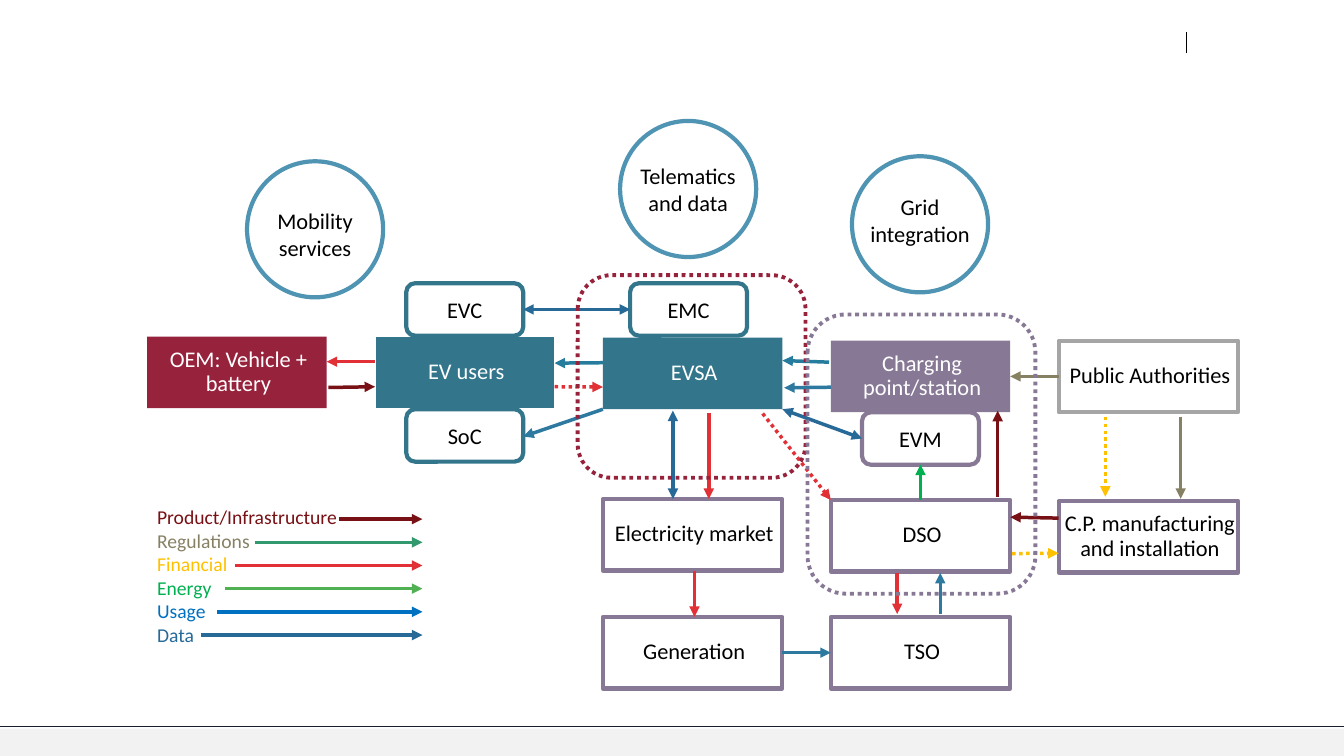
from dataclasses import dataclass

from lxml import etree
from pptx import Presentation
from pptx.dml.color import RGBColor
from pptx.enum import dml, shapes, text
from pptx.oxml import ns
from pptx.util import Inches, Pt


@dataclass(frozen=True)
class Theme:
    font: str = "Calibri"
    body: int = 16
    legend: int = 14
    rule: float = 1
    arrow: float = 2.5
    zone: float = 2.75
    outline: float = 3
    white: str = "FFFFFF"
    black: str = "000000"
    footer: str = "F2F2F2"
    navy: str = "16212B"
    wine: str = "97223C"
    teal: str = "33768C"
    purple: str = "877995"
    grey: str = "A5A5A5"
    ring: str = "4F94B3"
    product: str = "781115"
    regulation: str = "878164"
    finance: str = "E13137"
    yellow: str = "FFC000"
    energy: str = "00B050"
    usage: str = "0070C0"
    data: str = "276A98"
    exchange: str = "2D79A0"
    signal: str = "267C9C"
    sea: str = "31996D"
    leaf: str = "50B152"


T = Theme()
ACTOR_SIZE = (1.78, 0.71)
MODULE_SIZE = (1.16, 0.52)
COLUMN = 2.26

ACTORS = {
    "OEM: Vehicle + battery": (0, 0.61, T.wine, None),
    "EV users": (1, 0.61, T.teal, T.white),
    "EVSA": (2, 0.62, T.teal, None),
    "Charging point/station": (3, 0.65, T.purple, None),
    "Public Authorities": (4, 0.65, None, T.grey),
    "Electricity market": (2, 2.22, None, T.purple),
    "DSO": (3, 2.23, None, T.purple),
    "C.P. manufacturing and installation": (4, 2.24, None, T.purple),
    "Generation": (2, 3.39, None, T.purple),
    "TSO": (3, 3.39, None, T.purple),
}
MODULES = {
    "EVC": (2.57, 0.08, T.teal),
    "SoC": (2.57, 1.33, T.teal),
    "EMC": (4.79, 0.08, T.teal),
    "EVM": (7.09, 1.36, T.purple),
}
ZONES = [(4.27, 0, 2.26, 2.01, T.wine), (6.55, 0.39, 2.26, 2.77, T.purple)]
OEM, CHARGING, AUTHORITIES, MARKET, *_ = [
    name for name in ACTORS if name not in ("EV users", "EVSA")]
MANUFACTURING = "C.P. manufacturing and installation"
DOTTED, BOTH = {"dotted": True}, {"both": True}
FLOWS = [
    ("EV users", 0, 0.35, OEM, 1, 0.35, T.finance, {}),
    (OEM, 1.01, 0.71, "EV users", 0, 0.7, T.product, {}),
    ("EVSA", 0, 0.35, "EV users", 1, 0.37, T.signal, {}),
    ("EV users", 1, 0.7, "EVSA", 0, 0.69, T.finance, DOTTED),
    ("EVSA", 0, 1, "SoC", 1, 0.52, T.exchange, {}),
    ("EVC", 1, 0.5, "EMC", 0, 0.5, T.data, BOTH),
    (CHARGING, -0.01, 0.3, "EVSA", 1, 0.32, T.signal, {}),
    (CHARGING, 0, 0.65, "EVSA", 1.01, 0.7, T.exchange, {}),
    ("EVSA", 1, 1, "EVM", 0, 0.5, T.data, BOTH),
    ("EVSA", 0.89, 1.06, "DSO", 0, 0, T.finance, DOTTED),
    (MARKET, 0.39, 0, "EVSA", 0.39, 1.02, T.data, BOTH),
    ("EVSA", 0.59, 1.05, MARKET, 0.59, 0, T.finance, {}),
    (MARKET, 0.51, 1, "Generation", 0.51, 0, T.finance, {}),
    ("Generation", 1, 0.5, "TSO", 0, 0.5, T.exchange, {}),
    ("DSO", 0.37, 1.02, "TSO", 0.37, -0.04, T.finance, {}),
    ("TSO", 0.61, -0.04, "DSO", 0.61, 1.02, T.exchange, {}),
    ("DSO", 0.5, 0, "EVM", 0.5, 1, T.energy, {}),
    ("DSO", 0.93, -0.04, CHARGING, 0.93, 0.98, T.product, {}),
    (MANUFACTURING, 0, 0.24, "DSO", 1, 0.24, T.product, {}),
    ("DSO", 1.01, 0.75, MANUFACTURING, 0, 0.73, T.yellow, DOTTED),
    (AUTHORITIES, 0, 0.5, CHARGING, 1, 0.5, T.regulation, {}),
    (AUTHORITIES, 0.26, 1.06, MANUFACTURING, 0.26, -0.06, T.yellow, DOTTED),
    (AUTHORITIES, 0.68, 1.06, MANUFACTURING, 0.68, -0.03, T.regulation, {}),
]
SERVICES = [
    ("Mobility services", 2.45, 1.6, 0.05),
    ("Telematics and data", 6.15, 1.2, 0),
    ("Grid integration", 8.45, 1.55, -0.04),
]
LEGEND = [
    ("Product/Infrastructure", T.product, T.product, 1.9),
    ("Regulations", T.regulation, T.sea, 1.07),
    ("Financial", T.yellow, T.finance, 0.87),
    ("Energy", T.energy, T.leaf, 0.77),
    ("Usage", T.usage, T.usage, 0.69),
    ("Data", T.data, T.data, 0.53),
]


def write(paragraph, words, size=T.body, color=T.black, align=None, spacing=None, after=None):
    run = paragraph.add_run()
    run.text = words
    run.font.name, run.font.size = T.font, Pt(size)
    run.font.color.rgb = RGBColor.from_string(color)
    paragraph.alignment, paragraph.line_spacing = align, spacing
    if after is not None:
        paragraph.space_after = Pt(after)


def add_outline(slide, kind, box, fill=None, line=None, width=T.outline, dotted=False):
    outline = slide.shapes.add_shape(kind, *map(Inches, box))
    outline.shadow.inherit = False
    for paint, color in ((outline.fill, fill), (outline.line.fill, line)):
        if color:
            paint.solid()
            paint.fore_color.rgb = RGBColor.from_string(color)
        else:
            paint.background()
    if line:
        outline.line.width = Pt(width)
    if dotted:
        outline.line.dash_style = dml.MSO_LINE.ROUND_DOT
    return outline


def label(frame, words, insets=(0, 0, 0, 0), **style):
    frame.word_wrap = True
    frame.vertical_anchor = text.MSO_ANCHOR.MIDDLE
    frame.margin_left, frame.margin_top, frame.margin_right, frame.margin_bottom = map(Inches, insets)
    write(frame.paragraphs[0], words, align=text.PP_ALIGN.CENTER, **style)


def add_line(slide, start, end, color, width=T.arrow, dotted=False, both=False, arrow=True):
    line = slide.shapes.add_connector(shapes.MSO_CONNECTOR.STRAIGHT, *map(Inches, (*start, *end)))
    line.line.color.rgb = RGBColor.from_string(color)
    line.line.width = Pt(width)
    if dotted:
        line.line.dash_style = dml.MSO_LINE.ROUND_DOT
    properties = line._element.spPr
    stroke = properties.find(ns.qn("a:ln"))
    for tip, shown in (("a:headEnd", both), ("a:tailEnd", arrow)):
        if shown:
            etree.SubElement(stroke, ns.qn(tip), type="triangle")
    etree.SubElement(properties, ns.qn("a:effectLst"))


def page_frame(slide, width, height):
    add_outline(slide, shapes.MSO_SHAPE.RECTANGLE, (0, height - 0.27, width, 0.27), fill=T.footer)
    add_line(slide, (0, height - 0.29), (width, height - 0.29), T.navy, T.rule, arrow=False)
    add_line(slide, (width - 1.56, 0.32), (width - 1.56, 0.53), T.black, T.rule, arrow=False)


def service_circle(slide, words, left, top, drop, diameter=1.35, span=1.44):
    add_outline(slide, shapes.MSO_SHAPE.OVAL, (left, top, diameter, diameter), line=T.ring)
    caption = slide.shapes.add_textbox(*map(Inches, (
        left + (diameter - span) / 2, top + drop, span, diameter)))
    label(caption.text_frame, words, insets=(0.1, 0.05, 0.1, 0.05))


def ecosystem(slide, left, top):
    boxes = {}
    for name, (column, row, fill, line) in ACTORS.items():
        boxes[name] = (left + column * COLUMN, top + row, *ACTOR_SIZE)
        actor = add_outline(slide, shapes.MSO_SHAPE.RECTANGLE, boxes[name], fill, line,
                            T.rule if fill else T.outline)
        label(actor.text_frame, name, insets=(0.05, 0.04, 0.02, 0.04),
              color=T.white if fill else T.black, spacing=0.9, after=7)
    for name, (x, y, line) in MODULES.items():
        boxes[name] = (left + x, top + y, *MODULE_SIZE)
        module = add_outline(slide, shapes.MSO_SHAPE.ROUNDED_RECTANGLE, boxes[name], line=line)
        label(module.text_frame, name)

    def point(name, across, down):
        x, y, width, height = boxes[name]
        return x + across * width, y + down * height

    for giver, x1, y1, taker, x2, y2, color, style in FLOWS:
        add_line(slide, point(giver, x1, y1), point(taker, x2, y2), color, **style)
    for x, y, width, height, color in ZONES:
        add_outline(slide, shapes.MSO_SHAPE.ROUNDED_RECTANGLE, (left + x, top + y, width, height),
                    line=color, width=T.zone, dotted=True)


def flow_legend(slide, left, top, width=2, height=1.51):
    names = slide.shapes.add_textbox(*map(Inches, (left, top, width, height))).text_frame
    names.word_wrap = True
    for row, (words, color, arrow_color, start) in enumerate(LEGEND):
        paragraph = names.add_paragraph() if row else names.paragraphs[0]
        write(paragraph, words, size=T.legend, color=color)
        y = top + 0.19 + 0.23 * row
        add_line(slide, (left + start, y), (left + 2.73, y), arrow_color)


def main():
    deck = Presentation()
    deck.slide_width, deck.slide_height = Inches(13.33), Inches(7.5)
    slide = deck.slides.add_slide(deck.slide_layouts[6])
    page_frame(slide, 13.33, 7.5)
    ecosystem(slide, 1.46, 2.73)
    flow_legend(slide, 1.46, 4.96)
    for service in SERVICES:
        service_circle(slide, *service)
    deck.save("out.pptx")


if __name__ == "__main__":
    main()
